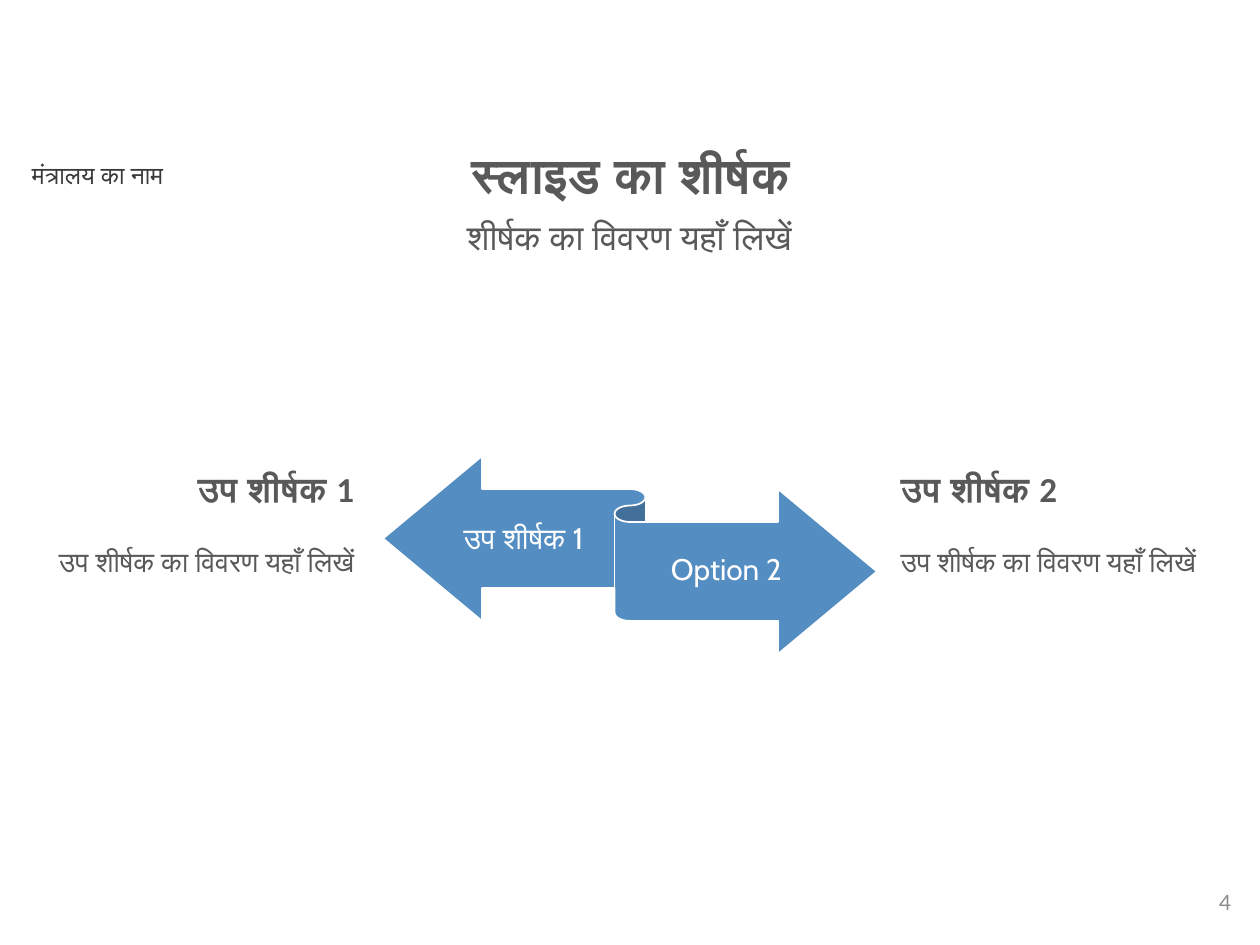
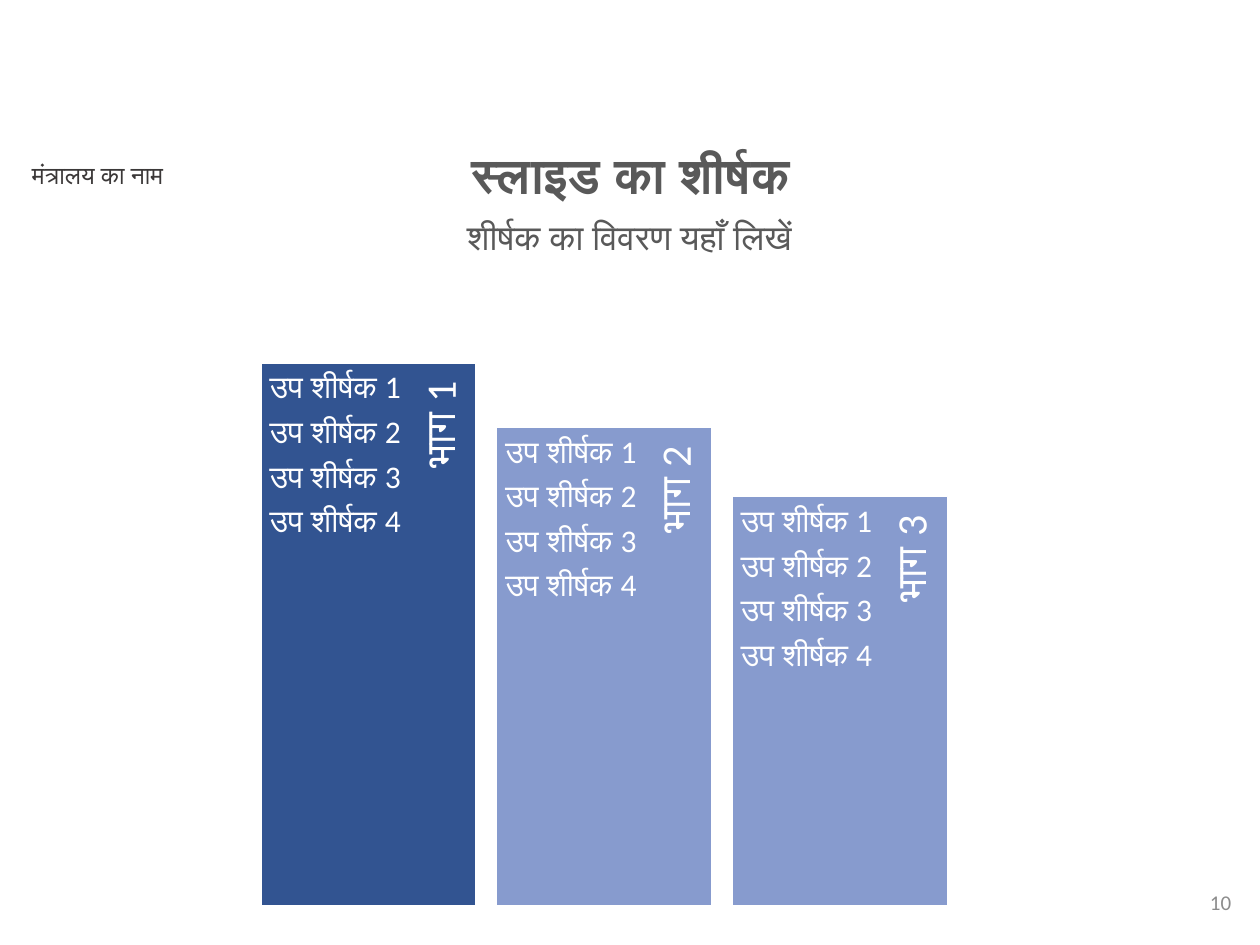
import pptx
import pptx.util
import pptx.dml.color
import pptx.enum.shapes
import pptx.enum.text
import pptx.oxml.ns
import lxml.etree

Pt = pptx.util.Pt
RGB = pptx.dml.color.RGBColor
Align = pptx.enum.text.PP_ALIGN
Anchor = pptx.enum.text.MSO_ANCHOR
Fit = pptx.enum.text.MSO_AUTO_SIZE
Kind = pptx.enum.shapes.MSO_SHAPE

PX = 9144  # 100 px to the inch
WHITE = RGB(0xFF, 0xFF, 0xFF)
DARK = RGB(0x3B, 0x38, 0x38)
GREY = RGB(0x59, 0x59, 0x59)
PALE = RGB(0x8C, 0x8C, 0x8C)
SKY = RGB(0x53, 0x8D, 0xC1)
NAVY = RGB(0x32, 0x54, 0x91)
LILAC = RGB(0x87, 0x9B, 0xCE)

MINOR = "उप शीर्षक"
DETAIL = "उप शीर्षक का विवरण यहाँ लिखें"


def font(size, color, name="Calibri", bold=False):
    return {"size": Pt(size), "color": color, "name": name, "bold": bold}


def para(align, line=1.0, before=0, after=0):
    return {"alignment": align, "line_spacing": line,
            "space_before": Pt(before), "space_after": Pt(after)}


def frame(anchor=Anchor.TOP, pads=(10, 5, 10, 5)):
    sides = ("left", "top", "right", "bottom")
    return {"word_wrap": True, "auto_size": Fit.NONE, "vertical_anchor": anchor,
            **{f"margin_{side}": pad * PX for side, pad in zip(sides, pads)}}


def apply(target, values):
    for key, value in values.items():
        if key == "color":
            target.color.rgb = value
        else:
            setattr(target, key, value)


class Deck:
    def __init__(self):
        self.file = pptx.Presentation()
        self.file.slide_width, self.file.slide_height = 1000 * PX, 750 * PX
        self.slide = None

    def fill(self, shape, lines, box):
        """Fill a shape with lines of (text, font, paragraph format)."""
        text = shape.text_frame
        apply(text, box)
        for i, (words, face, form) in enumerate(lines):
            par = text.add_paragraph() if i else text.paragraphs[0]
            apply(par, form)
            run = par.add_run()
            run.text = words
            apply(run.font, face)

    def text(self, spot, lines, box, turn=0):
        shape = self.slide.shapes.add_textbox(*(n * PX for n in spot))
        shape.rotation = turn
        self.fill(shape, lines, box)

    def shape(self, kind, spot, color):
        shape = self.slide.shapes.add_shape(kind, *(n * PX for n in spot))
        shape.shadow.inherit = False
        shape.fill.solid()
        shape.fill.fore_color.rgb = color
        shape.line.color.rgb = WHITE
        shape.line.width = Pt(1)

    def holder(self, shape, spot, words, face):
        """Move a placeholder and give it one centred line without a bullet."""
        shape.left, shape.top, shape.width, shape.height = (n * PX for n in spot)
        props = shape.text_frame.paragraphs[0]._p.get_or_add_pPr()
        props.set("marL", "0")
        props.set("indent", "0")
        lxml.etree.SubElement(props, pptx.oxml.ns.qn("a:buNone"))
        self.fill(shape, [(words, face, para(Align.CENTER, 0.9))], frame())

    def page(self, number, name):
        """Start a slide with its title, subtitle, ministry and number."""
        self.slide = self.file.slides.add_slide(self.file.slide_layouts[1])
        title, body = self.slide.placeholders
        self.holder(title, (186, 115, 629, 47), "स्लाइड का शीर्षक", font(28, GREY, bold=True))
        self.holder(body, (146, 170, 707, 63), "शीर्षक का विवरण यहाँ लिखें", font(20, GREY))
        self.text((-4, 122, 163, 34),
                  [("मंत्रालय का नाम", font(14, DARK), para(Align.CENTER))], frame())
        self.text((762, 696, 225, 40),
                  [(number, font(12, PALE, name), para(Align.RIGHT))], frame(Anchor.MIDDLE))


def arrows(deck):
    deck.page("4", "Lato")
    deck.shape(Kind.LEFT_RIGHT_RIBBON, (304, 362, 392, 157), SKY)
    label = font(17, WHITE, "Cabin")
    for spot, words in (((351, 390, 129, 77), f"{MINOR} 1"), ((500, 415, 153, 77), "Option 2")):
        deck.text(spot, [(words, label, para(Align.CENTER, 0.9))],
                  frame(Anchor.MIDDLE, (0, 7, 0, 7)))
    for n, left, align in ((1, 28, Align.RIGHT), (2, 705, Align.LEFT)):
        deck.text((left, 366, 263, 125),
                  [(f"{MINOR} {n}", font(20, GREY, bold=True), para(align)),
                   (DETAIL, font(16, GREY), para(align, before=20))], frame())


def steps(deck):
    deck.page("10", "Calibri")
    base, tab = 719, 44
    items = [(f"{MINOR} {n}", font(18, WHITE), para(Align.LEFT, 0.9, after=6))
             for n in range(1, 5)]
    for i, (top, color) in enumerate(((288, NAVY), (339, LILAC), (394, LILAC))):
        left, tall = 207 + 187 * i, base - top
        deck.shape(Kind.RECTANGLE, (left, top, 171, tall), color)
        span = tall * 9 // 10
        deck.text((left + 145 - span // 2, top + (span - tab) // 2, span, tab),
                  [(f"भाग {i + 1}", font(24, WHITE), para(Align.RIGHT, 0.9))],
                  frame(Anchor.MIDDLE, (10, 0, 15, 3)), 270)
        deck.text((left, top, 121, tall), items, frame(pads=(7, 7, 7, 7)))


def main():
    deck = Deck()
    arrows(deck)
    steps(deck)
    deck.file.save("out.pptx")


if __name__ == "__main__":
    main()
